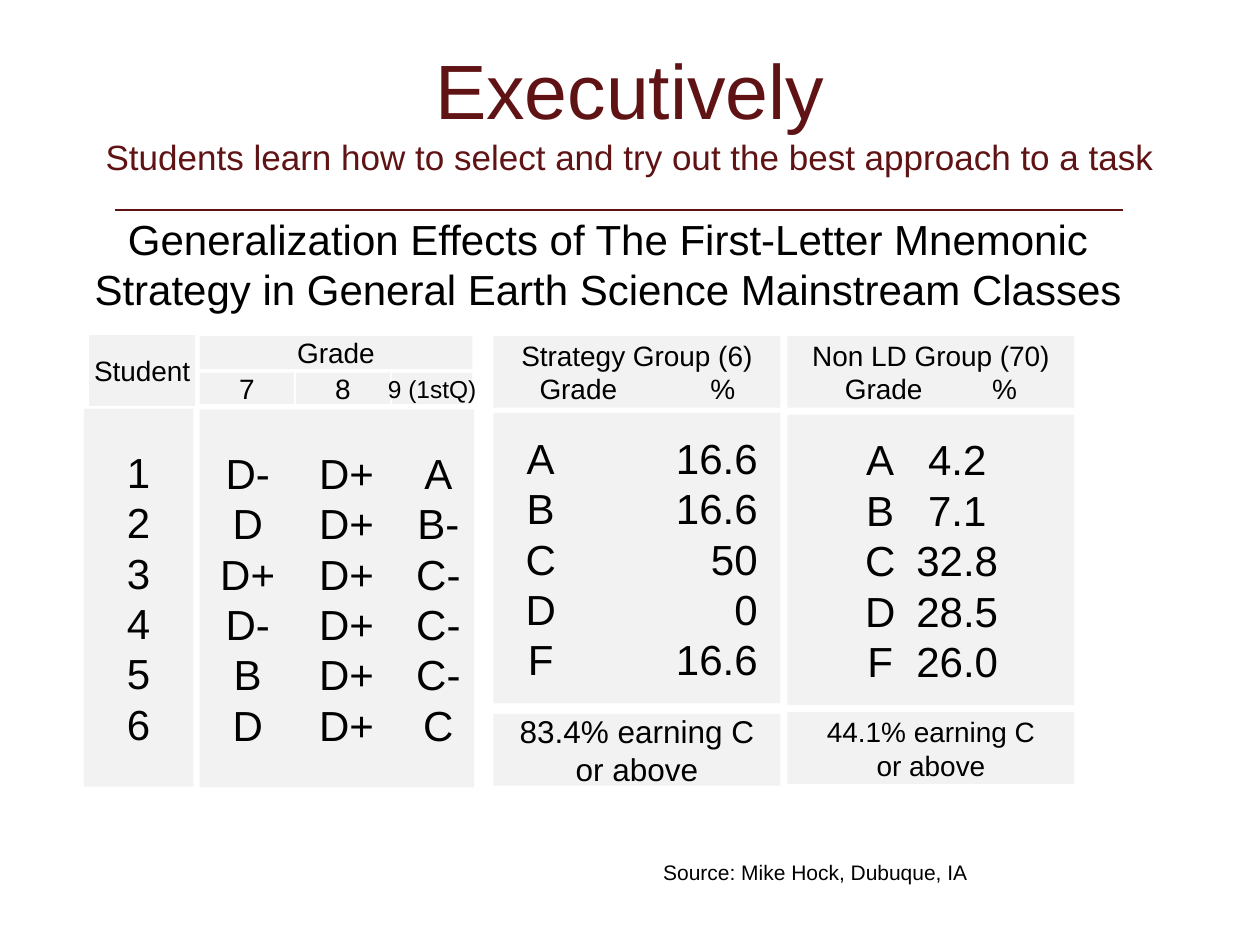
from pptx import Presentation
from pptx.util import Pt
from pptx.dml.color import RGBColor
from pptx.enum.shapes import MSO_SHAPE, MSO_CONNECTOR
from pptx.enum.text import PP_ALIGN, MSO_ANCHOR, MSO_AUTO_SIZE
from pptx.oxml.ns import qn
from lxml.etree import SubElement

MAROON = RGBColor(0x60, 0x13, 0x14)
BLACK = RGBColor(0, 0, 0)
GRAY = RGBColor(0xF2, 0xF2, 0xF2)


def style(para, size, color=BLACK, align=PP_ALIGN.CENTER):
    para.alignment = align
    para.font.name = "Arial"
    para.font.size = Pt(size)
    para.font.color.rgb = color


def panel(x, y, w, h, size, lines, stops=()):
    shape = slide.shapes.add_shape(MSO_SHAPE.RECTANGLE, Pt(x), Pt(y), Pt(w), Pt(h))
    shape.shadow.inherit = False
    shape.fill.solid()
    shape.fill.fore_color.rgb = GRAY
    shape.line.fill.background()
    frame = shape.text_frame
    frame.word_wrap = bool(stops)
    frame.vertical_anchor = MSO_ANCHOR.MIDDLE
    frame.margin_left = frame.margin_right = frame.margin_top = frame.margin_bottom = 0
    frame.text = "\n".join(lines)
    for para in frame.paragraphs:
        align = PP_ALIGN.CENTER
        if "\t" in para.text:
            align = PP_ALIGN.LEFT
            tabs = SubElement(para._p.get_or_add_pPr(), qn("a:tabLst"))
            for pos, kind in stops:
                SubElement(tabs, qn("a:tab"), pos=str(Pt(pos)), algn=kind)
        style(para, size, align=align)


deck = Presentation()
deck.slide_width, deck.slide_height = Pt(720), Pt(540)
slide = deck.slides.add_slide(deck.slide_layouts[1])

title, body = slide.placeholders
title.left, title.top, title.width, title.height = Pt(15), Pt(29.5), Pt(690), Pt(90)
frame = title.text_frame
frame.auto_size = MSO_AUTO_SIZE.NONE
frame.vertical_anchor = MSO_ANCHOR.MIDDLE
frame.margin_bottom = Pt(27)
para = frame.paragraphs[0]
style(para, 44, MAROON)
run = para.add_run()
run.text = "Executively"
run.font.size = Pt(44)
para.add_line_break()
run = para.add_run()
run.text = "Students learn how to select and try out the best approach to a task"
run.font.size = Pt(20)

body.left, body.top, body.width, body.height = Pt(30), Pt(115), Pt(635), Pt(312)
frame = body.text_frame
frame.auto_size = MSO_AUTO_SIZE.NONE
frame.margin_top = Pt(7)
frame.text = ("Generalization Effects of The First-Letter Mnemonic "
              "Strategy in General Earth Science Mainstream Classes")
para = frame.paragraphs[0]
para.space_before = Pt(0)
props = para._p.get_or_add_pPr()
props.set("marL", "0")
props.set("indent", "0")
SubElement(props, qn("a:buNone"))
style(para, 24)

rule = slide.shapes.add_connector(MSO_CONNECTOR.STRAIGHT, Pt(66), Pt(120), Pt(642), Pt(120))
rule.line.color.rgb = MAROON
rule.line.width = Pt(1.5)
SubElement(rule._element.spPr, qn("a:effectLst"))

panel(51, 191.5, 60.5, 40.5, 16, ["Student"])
panel(48, 233.5, 62.5, 216, 24, "123456")

panel(114, 192, 156, 19, 16, ["Grade"])
for x, w, size, label in [(114, 54, 16, "7"), (169, 54, 16, "8"), (224, 46, 14, "9 (1stQ)")]:
    panel(x, 213, w, 18, size, [label])
marks = ["D- D+ A", "D D+ B-", "D+ D+ C-", "D- D+ C-", "B D+ C-", "D D+ C"]
panel(114, 234, 157, 216, 24, ["\t" + row.replace(" ", "\t") for row in marks],
      [(27.5, "ctr"), (84, "ctr"), (136.5, "ctr")])

groups = [
    (282, "Strategy Group (6)", [(48.5, "ctr"), (131, "ctr")],
     ["16.6", "16.6", "50", "0", "16.6"], [(27, "ctr"), (151, "r")],
     236, 408, 18, "83.4% earning C"),
    (450, "Non LD Group (70)", [(55, "ctr"), (124, "ctr")],
     ["4.2", "7.1", "32.8", "28.5", "26.0"], [(53, "ctr"), (97, "ctr")],
     237, 407, 16, "44.1% earning C"),
]
for x, name, heads, shares, stops, top, foot, size, total in groups:
    panel(x, 192, 164, 41, 16, [name, "\tGrade\t%"], heads)
    rows = [f"\t{grade}\t{share}" for grade, share in zip("ABCDF", shares)]
    panel(x, top, 164, 166, 24, rows, stops)
    panel(x, foot, 164, 41, size, [total, "or above"])

source = slide.shapes.add_textbox(Pt(226), Pt(487.5), Pt(480), Pt(22))
source.text_frame.word_wrap = True
source.text_frame.text = "Source: Mike Hock, Dubuque, IA"
style(source.text_frame.paragraphs[0], 12)

deck.save("out.pptx")
